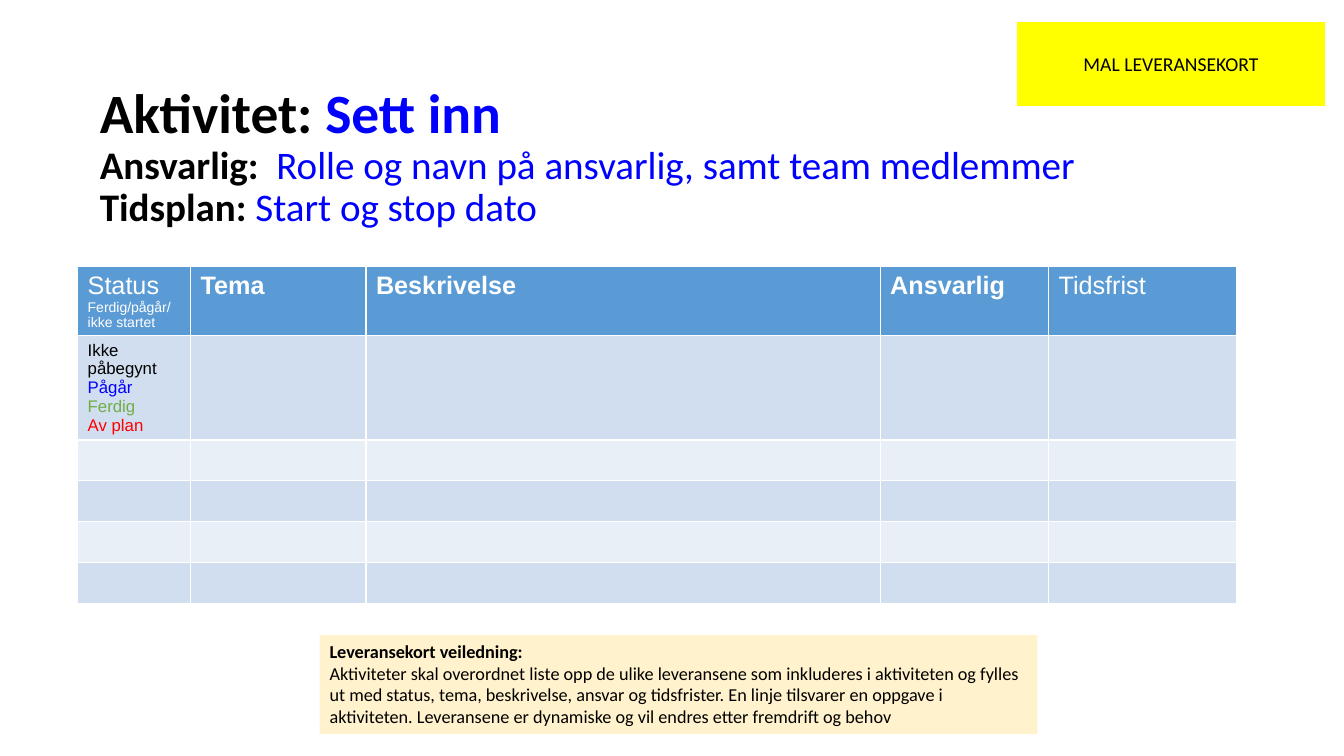
"""Build the activity delivery card slide with its status table and guidance."""
from pptx import Presentation
from pptx.dml.color import RGBColor
from pptx.enum.shapes import MSO_SHAPE as Shape
from pptx.enum.text import MSO_ANCHOR as Anchor, MSO_AUTO_SIZE as AutoSize, PP_ALIGN as Align
from pptx.util import Inches, Pt

BLACK = RGBColor(0x00, 0x00, 0x00)
WHITE = RGBColor(0xFF, 0xFF, 0xFF)
BLUE = RGBColor(0x00, 0x00, 0xFF)
GREEN = RGBColor(0x70, 0xAD, 0x47)
RED = RGBColor(0xFF, 0x00, 0x00)
YELLOW = RGBColor(0xFF, 0xFF, 0x00)
CREAM = RGBColor(0xFF, 0xF2, 0xCC)
HEADER_BLUE = RGBColor(0x5B, 0x9B, 0xD5)
BAND_DARK = RGBColor(0xD0, 0xDE, 0xEF)
BAND_LIGHT = RGBColor(0xE9, 0xEF, 0xF7)


def write_lines(frame, font_name, lines):
    """Write one paragraph per (text, size, colour, bold) line."""
    for index, (text, size, color, bold) in enumerate(lines):
        paragraph = frame.add_paragraph() if index else frame.paragraphs[0]
        paragraph.text = text
        font = paragraph.font
        font.name, font.size, font.bold = font_name, Pt(size), bold
        font.color.rgb = color


def add_box(slide, left, top, width, height, fill):
    """Add a plain filled rectangle and return it."""
    box = slide.shapes.add_shape(
        Shape.RECTANGLE, Inches(left), Inches(top), Inches(width), Inches(height))
    box.shadow.inherit = False
    box.fill.solid()
    box.fill.fore_color.rgb = fill
    box.line.fill.background()
    box.text_frame.word_wrap = True
    return box


presentation = Presentation()
presentation.slide_width, presentation.slide_height = Inches(13.33), Inches(7.5)
slide = presentation.slides.add_slide(presentation.slide_layouts[5])

title = slide.shapes.title
title.left, title.top = Inches(0.89), Inches(0.84)
title.width, title.height = Inches(11.5), Inches(1.45)
title_frame = title.text_frame
title_frame.auto_size = AutoSize.NONE
title_frame.word_wrap = True
title_frame.vertical_anchor = Anchor.MIDDLE
title_lines = [
    ("Aktivitet: ", "Sett inn", 39.6, True),
    ("Ansvarlig:  ", "Rolle og navn på ansvarlig, samt team medlemmer", 27.9, False),
    ("Tidsplan: ", "Start og stop dato", 27.9, False),
]
for index, (label, value, size, value_bold) in enumerate(title_lines):
    paragraph = title_frame.add_paragraph() if index else title_frame.paragraphs[0]
    paragraph.alignment = Align.LEFT
    paragraph.line_spacing = 0.9
    paragraph.font.name, paragraph.font.size = "Calibri", Pt(size)
    for text, color, bold in [(label, BLACK, True), (value, BLUE, value_bold)]:
        run = paragraph.add_run()
        run.text = text
        run.font.bold = bold
        run.font.color.rgb = color

column_widths = [1.12, 1.74, 5.1, 1.67, 1.87]
row_heights = [0.69, 1.03] + [0.4] * 4
table = slide.shapes.add_table(
    len(row_heights), len(column_widths), Inches(0.77), Inches(2.64),
    Inches(sum(column_widths)), Inches(sum(row_heights))).table
for column, width in zip(table.columns, column_widths):
    column.width = Inches(width)
for row_index, (row, height) in enumerate(zip(table.rows, row_heights)):
    row.height = Inches(height)
    band = BAND_DARK if row_index % 2 else BAND_LIGHT
    for cell in row.cells:
        cell.fill.solid()
        cell.fill.fore_color.rgb = band if row_index else HEADER_BLUE

headings = [("Status", False), ("Tema", True), ("Beskrivelse", True),
            ("Ansvarlig", True), ("Tidsfrist", False)]
for column_index, (heading, bold) in enumerate(headings):
    lines = [(heading, 18, WHITE, bold)]
    if heading == "Status":
        lines.append(("Ferdig/pågår/ikke startet", 10, WHITE, False))
    write_lines(table.cell(0, column_index).text_frame, "Arial", lines)

statuses = [("Ikke påbegynt", BLACK), ("Pågår", BLUE), ("Ferdig", GREEN), ("Av plan", RED)]
write_lines(table.cell(1, 0).text_frame, "Arial",
            [(status, 12, color, False) for status, color in statuses])

guidance = add_box(slide, 3.17, 6.3, 7.12, 0.98, CREAM)
guidance.text_frame.vertical_anchor = Anchor.TOP
write_lines(guidance.text_frame, "Calibri", [
    ("Leveransekort veiledning:", 13, BLACK, True),
    ("Aktiviteter skal overordnet liste opp de ulike leveransene som inkluderes i "
     "aktiviteten og fylles ut med status, tema, beskrivelse, ansvar og tidsfrister. "
     "En linje tilsvarer en oppgave i aktiviteten. Leveransene er dynamiske og vil "
     "endres etter fremdrift og behov", 13, BLACK, False),
])
for paragraph in guidance.text_frame.paragraphs:
    paragraph.alignment = Align.LEFT

badge = add_box(slide, 10.09, 0.22, 3.05, 0.83, YELLOW)
badge.line.color.rgb = YELLOW
badge.line.width = Pt(0.75)
badge.text_frame.vertical_anchor = Anchor.MIDDLE
write_lines(badge.text_frame, "Calibri", [("MAL LEVERANSEKORT", 14, BLACK, False)])
badge.text_frame.paragraphs[0].alignment = Align.CENTER

presentation.save("out.pptx")
